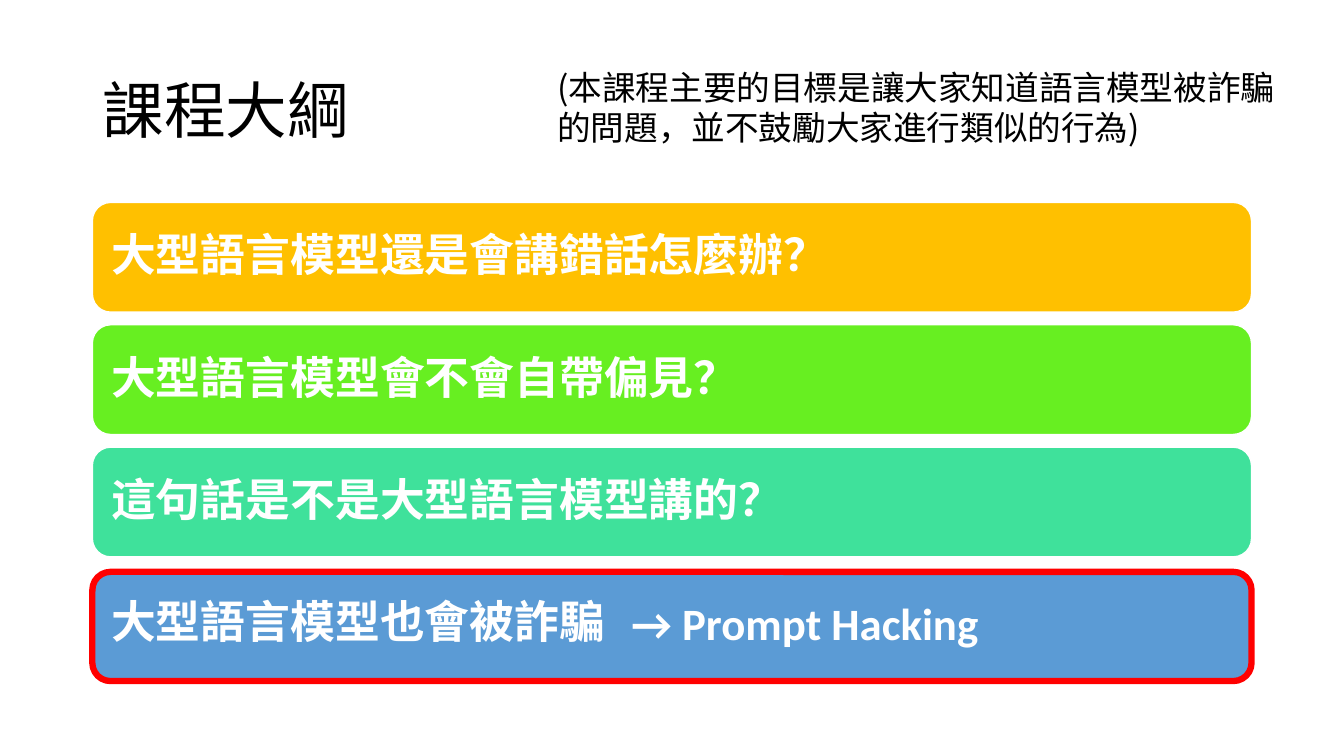
from lxml.etree import SubElement
from pptx import Presentation
from pptx.dml.color import RGBColor
from pptx.enum.shapes import MSO_SHAPE
from pptx.enum.text import MSO_ANCHOR, MSO_AUTO_SIZE, PP_ALIGN
from pptx.oxml.ns import qn
from pptx.util import Pt

BLACK = RGBColor(0x00, 0x00, 0x00)
WHITE = RGBColor(0xFF, 0xFF, 0xFF)
RED = RGBColor(0xFF, 0x00, 0x00)
AMBER = RGBColor(0xFF, 0xC0, 0x00)
LIME = RGBColor(0x67, 0xEF, 0x21)
MINT = RGBColor(0x3F, 0xE1, 0x9B)
BLUE = RGBColor(0x5B, 0x9B, 0xD5)

CJK, LATIN = "Noto Sans CJK SC", "Calibri"
LEFT, WIDTH = 66, 828
BAR_TOP, BAR_HEIGHT, BAR_STEP = 144.6, 78.4, 87.4

TOPICS = [
    ("大型語言模型還是會講錯話怎麼辦？", AMBER),
    ("大型語言模型會不會自帶偏見？", LIME),
    ("這句話是不是大型語言模型講的？", MINT),
    ("大型語言模型也會被詐騙", BLUE),
]


class OutlineSlide:
    def __init__(self, prs):
        self.s = prs.slides.add_slide(prs.slide_layouts[5])
        self.heading = {"size": Pt(44), "bold": False, "name": CJK}
        self.topic = {"size": Pt(32), "bold": True, "name": CJK}
        self.remark = {"size": Pt(24), "bold": False, "name": CJK}

    def put_text(self, tf, text, style, color, **layout):
        """Fill a text frame with one left-aligned run; layout sets paragraph values."""
        tf.word_wrap = True
        p = tf.paragraphs[0]
        for key, value in {"alignment": PP_ALIGN.LEFT, **layout}.items():
            setattr(p, key, value)
        r = p.add_run()
        r.text = text
        for key, value in style.items():
            setattr(r.font, key, value)
        r.font.color.rgb = color
        SubElement(r._r.get_or_add_rPr(), qn("a:ea")).set("typeface", style["name"])

    def title(self, text, x, y, w, h):
        sp = self.s.shapes.title
        sp.left, sp.top, sp.width, sp.height = Pt(x), Pt(y), Pt(w), Pt(h)
        tf = sp.text_frame
        tf.auto_size = MSO_AUTO_SIZE.NONE
        tf.vertical_anchor = MSO_ANCHOR.MIDDLE
        self.put_text(tf, text, self.heading, BLACK, line_spacing=0.9)

    def bar(self, x, y, w, h, line, weight, fill=None):
        sp = self.s.shapes.add_shape(MSO_SHAPE.ROUNDED_RECTANGLE, Pt(x), Pt(y), Pt(w), Pt(h))
        sp.shadow.inherit = False
        if fill is None:
            sp.fill.background()
        else:
            sp.fill.solid()
            sp.fill.fore_color.rgb = fill
        sp.line.color.rgb = line
        sp.line.width = Pt(weight)
        return sp

    def topic_bar(self, text, fill, y):
        tf = self.bar(LEFT, y, WIDTH, BAR_HEIGHT, WHITE, 1, fill).text_frame
        tf.vertical_anchor = MSO_ANCHOR.MIDDLE
        # The rounded corners already inset the text by about 4 pt.
        tf.margin_left = tf.margin_right = Pt(9.6)
        self.put_text(tf, text, self.topic, WHITE, line_spacing=0.9)

    def label(self, text, x, y, w, h, style, color):
        tf = self.s.shapes.add_textbox(Pt(x), Pt(y), Pt(w), Pt(h)).text_frame
        self.put_text(tf, text, style, color)
        tf.auto_size = MSO_AUTO_SIZE.SHAPE_TO_FIT_TEXT


def main():
    prs = Presentation()
    prs.slide_width, prs.slide_height = Pt(960), Pt(540)
    outline = OutlineSlide(prs)
    outline.title("課程大綱", LEFT, 28.75, WIDTH, 104.4)
    for i, (text, fill) in enumerate(TOPICS):
        outline.topic_bar(text, fill, BAR_TOP + i * BAR_STEP)
    outline.bar(LEFT, 408.5, WIDTH, 78, RED, 4.5)
    outline.label("→ Prompt Hacking", 444, 422, 314.6, 46,
                  {**outline.topic, "name": LATIN}, WHITE)
    outline.label("(本課程主要的目標是讓大家知道語言模型被詐騙的問題，並不鼓勵大家進行類似的行為)",
                  391, 44, 544.3, 65.4, outline.remark, BLACK)
    prs.save("out.pptx")


if __name__ == "__main__":
    main()
